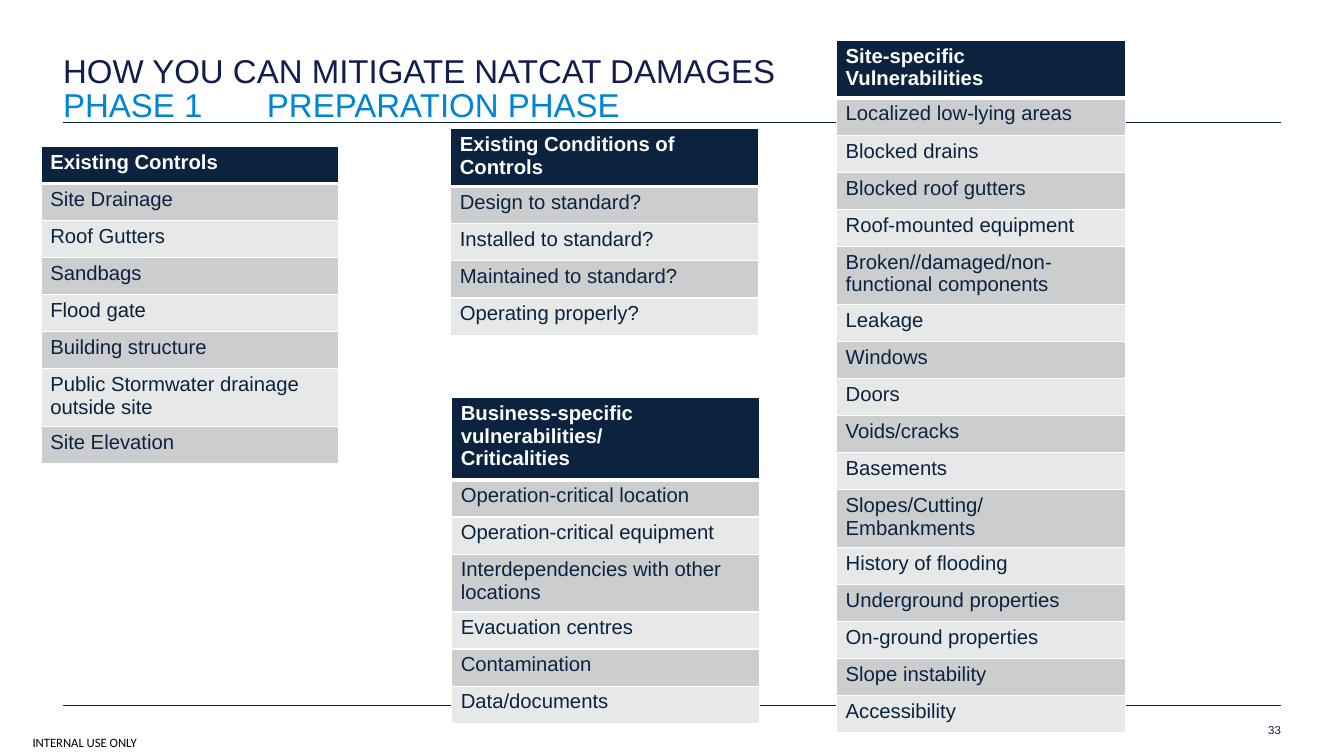
from dataclasses import dataclass

from lxml.etree import SubElement
from pptx import Presentation
from pptx.dml.color import RGBColor
from pptx.enum.text import MSO_ANCHOR, PP_ALIGN
from pptx.oxml.ns import qn
from pptx.util import Inches, Pt


@dataclass(frozen=True)
class Theme:
    navy: str = "0C2340"
    indigo: str = "141B4D"
    blue: str = "0084D5"
    black: str = "000000"
    white: str = "FFFFFF"
    bands: tuple = ("CCCDCF", "E7E8E8")
    font: str = "Arial"
    label_font: str = "Calibri"
    heading: int = 26
    cell: int = 16
    label: int = 10
    number: int = 9
    rule: float = 0.5
    border: int = 1
    header_border: int = 3


THEME = Theme()
ROW_HEIGHT = Inches(7.3 / 18)
RULE_LEFT, RULE_RIGHT = 0.69, 14.01

TABLES = [
    (0.45, 1.6, 3.25, [
        "Existing Controls", "Site Drainage", "Roof Gutters", "Sandbags",
        "Flood gate", "Building structure",
        "Public Stormwater drainage outside site", "Site Elevation",
    ]),
    (4.93, 1.41, 3.37, [
        "Existing Conditions of Controls", "Design to standard?",
        "Installed to standard?", "Maintained to standard?",
        "Operating properly?",
    ]),
    (9.15, 0.44, 3.16, [
        "Site-specific\nVulnerabilities", "Localized low-lying areas",
        "Blocked drains", "Blocked roof gutters", "Roof-mounted equipment",
        "Broken//damaged/non-functional components", "Leakage", "Windows",
        "Doors", "Voids/cracks", "Basements", "Slopes/Cutting/\nEmbankments",
        "History of flooding", "Underground properties",
        "On-ground properties", "Slope instability", "Accessibility",
    ]),
    (4.94, 4.35, 3.37, [
        "Business-specific vulnerabilities/\nCriticalities",
        "Operation-critical location", "Operation-critical equipment",
        "Interdependencies with other locations", "Evacuation centres",
        "Contamination", "Data/documents",
    ]),
]


def style_text(tf, size, color, font=THEME.font, bold=False):
    for p in tf.paragraphs:
        for r in p.runs:
            r.font.size = Pt(size)
            r.font.name = font
            r.font.bold = bold
            r.font.color.rgb = RGBColor.from_string(color)


def add_text(slide, text, box, size, color, font=THEME.font,
             align=PP_ALIGN.LEFT, anchor=MSO_ANCHOR.TOP, top_inset=0, tab=None):
    tf = slide.shapes.add_textbox(*map(Inches, box)).text_frame
    tf.word_wrap = True
    tf.vertical_anchor = anchor
    tf.margin_left = tf.margin_right = tf.margin_bottom = 0
    tf.margin_top = Inches(top_inset)
    p = tf.paragraphs[0]
    p.text = text
    p.alignment = align
    if tab:
        tabs = SubElement(p._p.get_or_add_pPr(), qn("a:tabLst"))
        SubElement(tabs, qn("a:tab"), pos=str(Inches(tab)), algn="l")
    style_text(tf, size, color, font)


def add_rule(slide, y):
    line = slide.shapes.add_connector(
        1, Inches(RULE_LEFT), Inches(y), Inches(RULE_RIGHT), Inches(y))
    line.line.color.rgb = RGBColor.from_string(THEME.navy)
    line.line.width = Pt(THEME.rule)
    SubElement(line._element.spPr, qn("a:effectLst"))


def set_borders(cell, top, bottom):
    tcPr = cell._tc.get_or_add_tcPr()
    widths = {"lnL": THEME.border, "lnR": THEME.border, "lnT": top, "lnB": bottom}
    for side, width in widths.items():
        ln = SubElement(tcPr, qn(f"a:{side}"), w=str(Pt(width)))
        fill = SubElement(ln, qn("a:solidFill"))
        SubElement(fill, qn("a:srgbClr"), val=THEME.white)


def add_list_table(slide, left, top, width, items):
    table = slide.shapes.add_table(
        len(items), 1, Inches(left), Inches(top), Inches(width),
        ROW_HEIGHT * len(items)).table
    for i, item in enumerate(items):
        cell = table.cell(i, 0)
        header = i == 0
        cell.text_frame.text = item
        style_text(cell.text_frame, THEME.cell,
                   THEME.white if header else THEME.navy, bold=header)
        set_borders(cell,
                    THEME.header_border if i == 1 else THEME.border,
                    THEME.header_border if header else THEME.border)
        cell.fill.solid()
        cell.fill.fore_color.rgb = RGBColor.from_string(
            THEME.navy if header else THEME.bands[(i - 1) % 2])


def main():
    prs = Presentation()
    prs.slide_width, prs.slide_height = Inches(14.7), Inches(8.27)
    slide = prs.slides.add_slide(prs.slide_layouts[6])

    add_text(slide, "INTERNAL USE ONLY", (0, 8.04, 1.85, 0.17), THEME.label,
             THEME.black, THEME.label_font, PP_ALIGN.CENTER, MSO_ANCHOR.MIDDLE)
    for y in (7.72, 1.34):
        add_rule(slide, y)
    add_text(slide, "33", (13.71, 7.91, 0.3, 0.16), THEME.number, THEME.navy,
             align=PP_ALIGN.RIGHT)
    add_text(slide, "PHASE 1\tPREPARATION PHASE", (RULE_LEFT, 0.88, 11.03, 0.35),
             THEME.heading, THEME.blue, top_inset=0.04, tab=2.23)
    add_text(slide, "HOW YOU CAN MITIGATE NATCAT DAMAGES",
             (RULE_LEFT, 0.51, 11.03, 0.47), THEME.heading, THEME.indigo,
             top_inset=0.04)
    for table in TABLES:
        add_list_table(slide, *table)

    prs.save("out.pptx")


if __name__ == "__main__":
    main()
